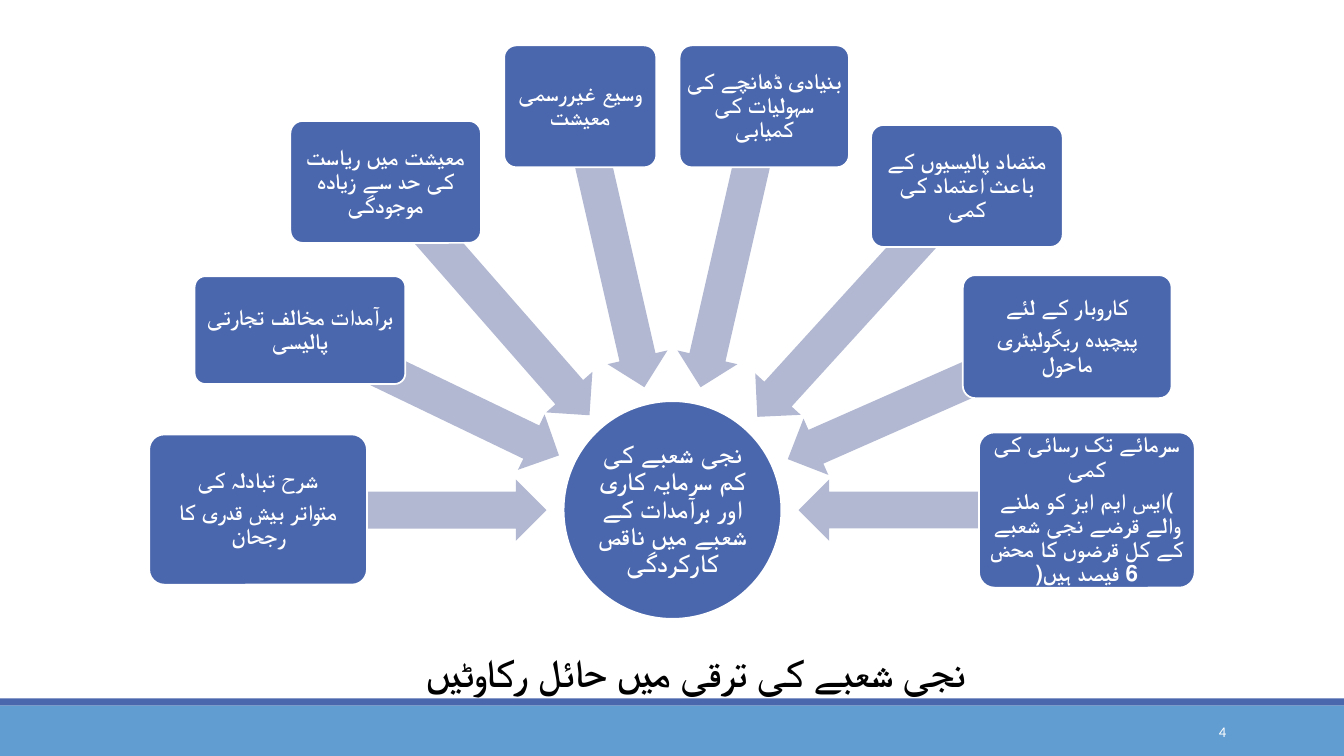
from math import cos, radians, sin

from pptx import Presentation
from pptx.dml.color import RGBColor
from pptx.enum.shapes import MSO_SHAPE
from pptx.enum.text import MSO_ANCHOR, PP_ALIGN
from pptx.util import Inches, Pt

COLORS = {
    "blue": "4A66AC",
    "sky": "629DD1",
    "arrow": "B2B8D2",
    "white": "FFFFFF",
    "black": "000000",
}
HUB_X, HUB_Y, HUB_SIZE = 6.67, 5.06, 2.16
REACH = 1.25  # hub centre to arrow tip
HUB_TEXT = "نجی شعبے کی کم سرمایہ کاری اور برآمدات کے شعبے میں ناقص کارکردگی"
TITLE = "نجی شعبے کی ترقی میں حائل رکاوٹیں"

# box (left, top, width, height), arrow angle, arrow length, paragraphs
CAUSES = [
    ((9.71, 4.29, 2.14, 1.54), 0, 2.86,
     ["سرمائے تک رسائی کی کمی",
      ")ایس ایم ایز کو ملنے والے قرضے نجی شعبے کے کل قرضوں کا محض 6 فیصد ہیں("]),
    ((9.55, 2.73, 2.07, 1.22), 336.2, 3.02,
     ["کاروبار کے لئے", "پیچیدہ ریگولیٹری ماحول"]),
    ((8.64, 1.24, 1.9, 1.21), 312.3, 3.08,
     ["متضاد پالیسیوں کے باعث اعتماد کی کمی"]),
    ((6.74, 0.45, 1.68, 1.21), 282.9, 2.86,
     ["بنیادی ڈھانچے کی سہولیات کی کمیابی"]),
    ((5, 0.45, 1.51, 1.21), 257.1, 2.86, ["وسیع غیررسمی معیشت"]),
    ((2.88, 1.2, 1.89, 1.21), 228.8, 3.06,
     ["معیشت میں ریاست کی حد سے زیادہ موجودگی"]),
    ((1.93, 2.74, 2.09, 1.07), 205.7, 2.86, ["برآمدات مخالف تجارتی پالیسی"]),
    ((1.48, 4.31, 2.16, 1.49), 180, 2.86,
     ["شرح تبادلہ کی", "متواتر بیش قدری کا رجحان"]),
]


def color(name):
    return RGBColor.from_string(COLORS[name])


def apply(target, values):
    for name, value in values.items():
        setattr(target, name, value)


def add_shape(slide, kind, box, fill, line=None, adjust=()):
    shape = slide.shapes.add_shape(kind, *map(Inches, box))
    shape.shadow.inherit = False
    shape.fill.solid()
    shape.fill.fore_color.rgb = color(fill)
    if line:
        shape.line.color.rgb = color(line)
        shape.line.width = Pt(1.25)
    else:
        shape.line.fill.background()
    for i, value in enumerate(adjust):
        shape.adjustments[i] = value
    return shape


def write(shape, texts, tint, font, layout, inset=None, rtl=False):
    """Fill a shape with one paragraph per text."""
    frame = shape.text_frame
    apply(frame, {"word_wrap": True, "vertical_anchor": MSO_ANCHOR.MIDDLE})
    if inset is not None:
        for side in ("left", "top", "right", "bottom"):
            setattr(frame, f"margin_{side}", Inches(inset))
    for i, text in enumerate(texts):
        para = frame.add_paragraph() if i else frame.paragraphs[0]
        apply(para, layout)
        if rtl:
            para._p.get_or_add_pPr().set("rtl", "1")
        run = para.add_run()
        run.text = text
        apply(run.font, font)
        run.font.color.rgb = color(tint)


def add_label(slide, box, text, tint, font, layout):
    label = slide.shapes.add_textbox(*map(Inches, box))
    write(label, [text], tint, font, layout)
    return label


def add_node(slide, kind, box, texts, size, inset, adjust=()):
    """Add a white-edged blue shape with right-to-left text."""
    node = add_shape(slide, kind, box, "blue", "white", adjust)
    write(node, texts, "white",
          {"name": "Lato", "size": Pt(size), "bold": True},
          {"alignment": PP_ALIGN.CENTER, "line_spacing": 0.9,
           "space_after": Pt(0.35 * size)},
          inset, rtl=True)


def add_arrow(slide, angle, length):
    """Add an arrow that points at the hub from the given angle."""
    height = 0.61
    dist = REACH + length / 2
    x = HUB_X + dist * cos(radians(angle))
    y = HUB_Y + dist * sin(radians(angle))
    box = (x - length / 2, y - height / 2, length, height)
    arrow = add_shape(slide, MSO_SHAPE.LEFT_ARROW, box, "arrow",
                      adjust=(0.6, 0.5))
    arrow.rotation = angle


def main():
    deck = Presentation()
    apply(deck, {"slide_width": Inches(13.33), "slide_height": Inches(7.5)})
    slide = deck.slides.add_slide(deck.slide_layouts[6])

    title = add_label(slide, (1.4, 6.2, 11, 1), TITLE, "black",
                      {"name": "Lato", "size": Pt(28), "bold": True},
                      {"alignment": PP_ALIGN.CENTER, "line_spacing": 0.85})
    title.text_frame.paragraphs[0].runs[0].font._element.set("spc", "-50")

    for top, height, fill in ((6.93, 0.07, "blue"), (7, 0.5, "sky")):
        add_shape(slide, MSO_SHAPE.RECTANGLE, (0, top, 13.33, height), fill)
    add_label(slide, (10.83, 7.06, 1.43, 0.4), "4", "white",
              {"name": "Calibri", "size": Pt(10.5)},
              {"alignment": PP_ALIGN.RIGHT, "space_after": Pt(6)})

    half = HUB_SIZE / 2
    add_node(slide, MSO_SHAPE.OVAL,
             (HUB_X - half, HUB_Y - half, HUB_SIZE, HUB_SIZE),
             [HUB_TEXT], 18, 0.01)
    for box, angle, length, texts in CAUSES:
        add_arrow(slide, angle, length)
        add_node(slide, MSO_SHAPE.ROUNDED_RECTANGLE, box, texts, 16, 0.03,
                 (0.1,))

    deck.save("out.pptx")


if __name__ == "__main__":
    main()
